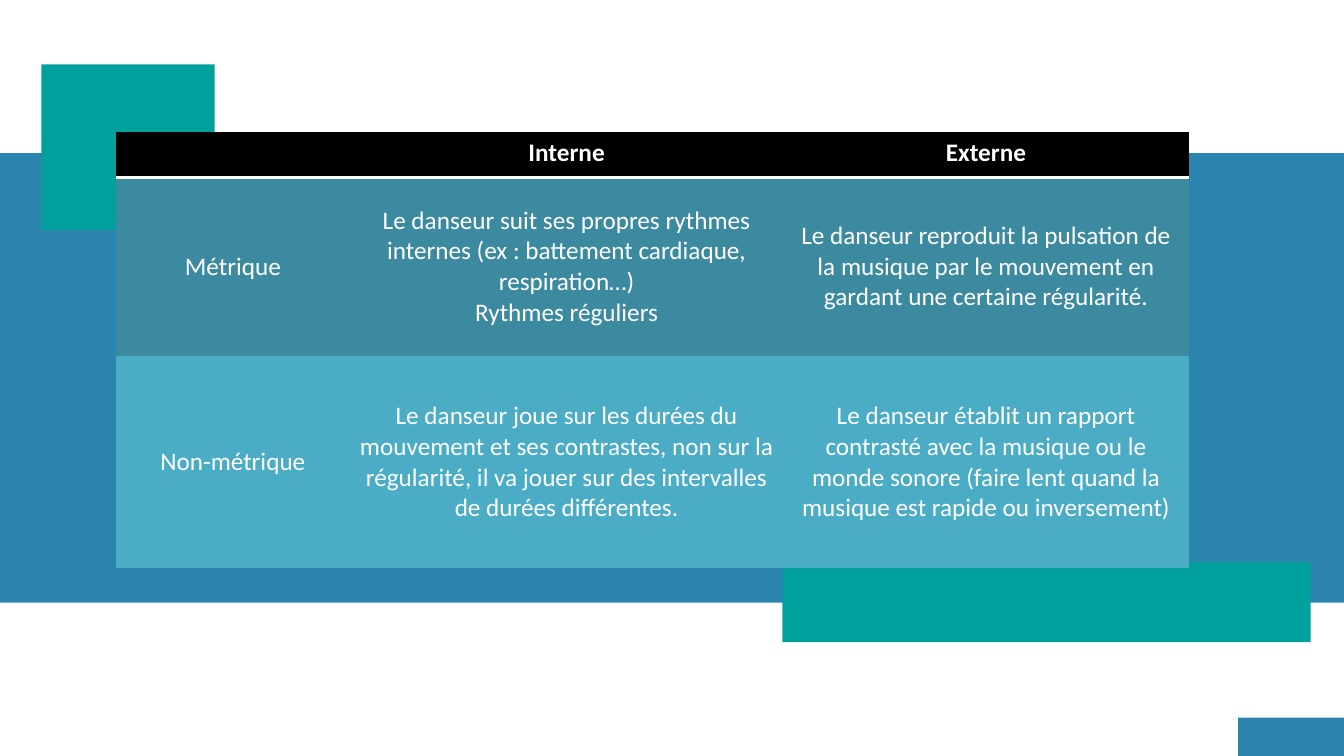
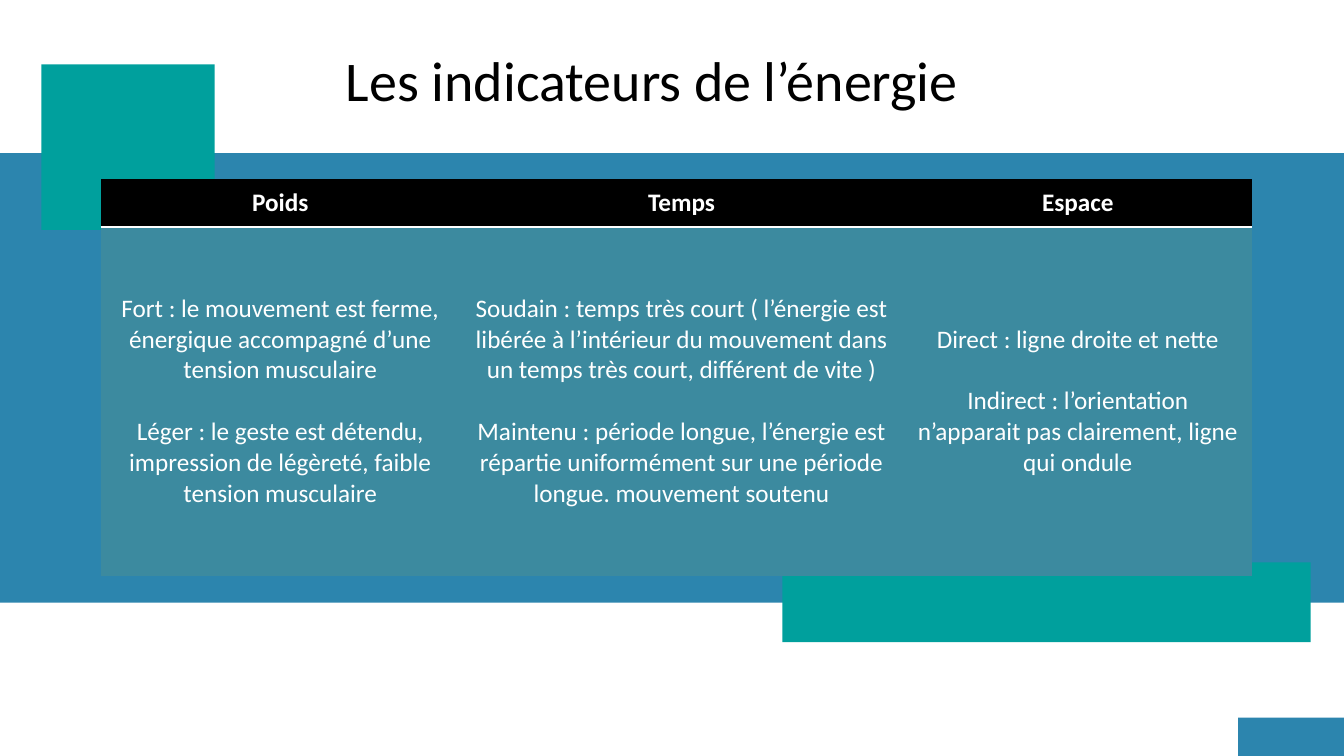
from dataclasses import dataclass

from lxml.etree import SubElement
from pptx import Presentation
from pptx.dml.color import RGBColor
from pptx.enum.shapes import MSO_SHAPE
from pptx.enum.text import MSO_ANCHOR, PP_ALIGN
from pptx.oxml import parse_xml
from pptx.oxml.ns import nsdecls, qn
from pptx.util import Inches, Pt


@dataclass(frozen=True)
class Theme:
    font: str = "Calibri"
    title_size: int = 40
    table_size: int = 18
    paragraph_gap: int = 22
    rule_width: int = 2
    blue: RGBColor = RGBColor(0x2C, 0x85, 0xAE)
    green: RGBColor = RGBColor(0x00, 0xA0, 0x9D)
    black: RGBColor = RGBColor(0x00, 0x00, 0x00)
    white: RGBColor = RGBColor(0xFF, 0xFF, 0xFF)
    body_rows: tuple = (RGBColor(0x3C, 0x8A, 0x9F), RGBColor(0x4B, 0xAC, 0xC6))


THEME = Theme()
TITLE_ONLY, BLANK = 5, 6
PLAIN_TABLE_STYLE = "{2D5ABB26-0587-4C30-8999-92F81FD0307C}"

BACKDROP = [
    (THEME.blue, (12.28, 7.12, 1.05, 0.38)),
    (THEME.blue, (0, 1.52, 13.33, 4.46)),
    (THEME.green, (0.41, 0.64, 1.72, 1.64)),
    (THEME.green, (7.76, 5.58, 5.24, 0.79)),
]

RHYTHM = [
    ["", "Interne", "Externe"],
    [
        "Métrique",
        "Le danseur suit ses propres rythmes internes (ex : battement cardiaque, "
        "respiration…)\nRythmes réguliers",
        "Le danseur reproduit la pulsation de la musique par le mouvement en "
        "gardant une certaine régularité.",
    ],
    [
        "Non-métrique",
        "Le danseur joue sur les durées du mouvement et ses contrastes, non sur "
        "la régularité, il va jouer sur des intervalles de durées différentes.",
        "Le danseur établit un rapport contrasté avec la musique ou le monde "
        "sonore (faire lent quand la musique est rapide ou inversement)",
    ],
]

ENERGY = [
    ["Poids", "Temps", "Espace"],
    [
        "Fort : le mouvement est ferme, énergique accompagné d’une tension "
        "musculaire\nLéger : le geste est détendu, impression de légèreté, "
        "faible tension musculaire",
        "Soudain : temps très court ( l’énergie est libérée à l’intérieur du "
        "mouvement dans un temps très court, différent de vite )\n"
        "Maintenu : période longue, l’énergie est répartie uniformément sur une "
        "période longue. mouvement soutenu",
        "Direct : ligne droite et nette\n"
        "Indirect : l’orientation n’apparait pas clairement, ligne qui ondule",
    ],
]


def add_slide(prs, layout):
    """Add a slide with the shared bands and blocks behind its content."""
    slide = prs.slides.add_slide(prs.slide_layouts[layout])
    for position, (color, box) in enumerate(BACKDROP):
        block = slide.shapes.add_shape(MSO_SHAPE.RECTANGLE, *map(Inches, box))
        block.shadow.inherit = False
        block.fill.solid()
        block.fill.fore_color.rgb = color
        block.line.fill.background()
        # Keep the backdrop behind the placeholders.
        slide.shapes._spTree.insert(2 + position, block._element)
    return slide


def style_paragraph(paragraph, size, color, bold=False):
    paragraph.alignment = PP_ALIGN.CENTER
    font = paragraph.font
    font.name, font.size, font.bold = THEME.font, Pt(size), bold
    font.color.rgb = color


def set_title(slide, text, box):
    title = slide.shapes.title
    title.left, title.top, title.width, title.height = map(Inches, box)
    title.text_frame.text = text
    style_paragraph(title.text_frame.paragraphs[0], THEME.title_size, THEME.black)


def rule_below(cell):
    rule = parse_xml(f'<a:lnB {nsdecls("a")} w="{Pt(THEME.rule_width)}"/>')
    fill = SubElement(rule, qn("a:solidFill"))
    SubElement(fill, qn("a:srgbClr"), val=str(THEME.white))
    cell._tc.get_or_add_tcPr().insert(0, rule)


def fill_cell(cell, text, color, anchor, bold, gap):
    cell.fill.solid()
    cell.fill.fore_color.rgb = color
    cell.vertical_anchor = anchor
    cell.text = text
    for index, paragraph in enumerate(cell.text_frame.paragraphs):
        style_paragraph(paragraph, THEME.table_size, THEME.white, bold)
        if index:
            paragraph.space_before = Pt(gap)


def add_table(slide, rows, corner, widths, heights,
              header_anchor=MSO_ANCHOR.MIDDLE, gap=0):
    """Add a table with a ruled black header; gap (points) parts paragraphs."""
    size = sum(widths), sum(heights)
    frame = slide.shapes.add_table(
        len(rows), len(widths), *map(Inches, (*corner, *size)))
    table = frame.table
    table._tbl.tblPr.find(qn("a:tableStyleId")).text = PLAIN_TABLE_STYLE
    table.horz_banding = False
    for column, width in zip(table.columns, widths):
        column.width = Inches(width)
    for row, height in zip(table.rows, heights):
        row.height = Inches(height)
    for r, (texts, color) in enumerate(zip(rows, (THEME.black, *THEME.body_rows))):
        is_header = r == 0
        anchor = header_anchor if is_header else MSO_ANCHOR.MIDDLE
        for c, text in enumerate(texts):
            cell = table.cell(r, c)
            fill_cell(cell, text, color, anchor, is_header, gap)
            if is_header:
                rule_below(cell)


def main():
    prs = Presentation()
    prs.slide_width, prs.slide_height = Inches(13.33), Inches(7.5)

    rhythm = add_slide(prs, BLANK)
    add_table(rhythm, RHYTHM, (1.15, 1.31), (2.32, 4.3, 4.02),
              (0.45, 1.77, 2.11), header_anchor=MSO_ANCHOR.TOP)

    energy = add_slide(prs, TITLE_ONLY)
    set_title(energy, "Les indicateurs de l’énergie", (2.25, 0.39, 8.43, 0.79))
    add_table(energy, ENERGY, (1, 1.78), (3.56, 4.4, 3.46),
              (0.47, 3.46), gap=THEME.paragraph_gap)

    prs.save("out.pptx")


if __name__ == "__main__":
    main()
